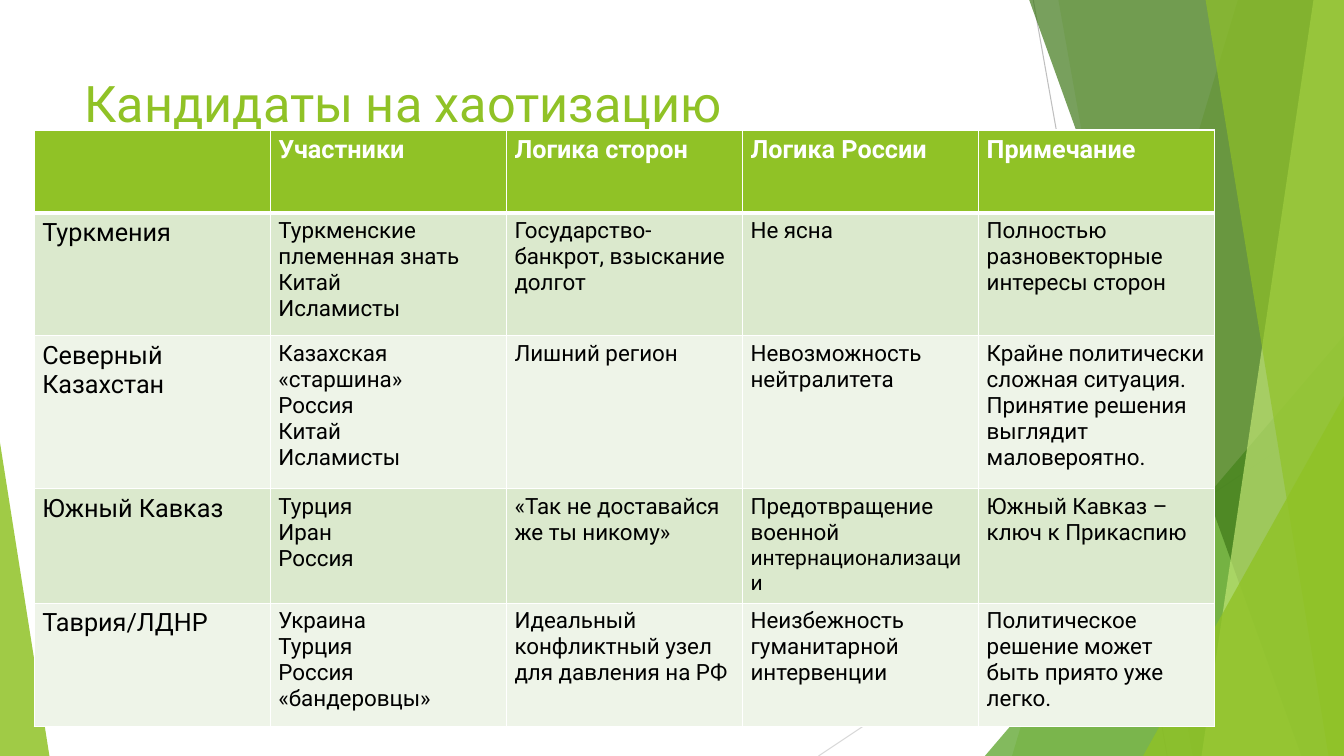
from lxml.etree import SubElement
from pptx import Presentation
from pptx.dml.color import RGBColor
from pptx.enum.shapes import MSO_CONNECTOR, MSO_SHAPE
from pptx.enum.text import MSO_ANCHOR
from pptx.oxml import parse_xml
from pptx.oxml.ns import nsdecls, qn
from pptx.util import Inches, Pt

C = {"lime": "90C226", "green": "54A021", "forest": "3F7819", "pale": "C0E474",
     "grey": "BFBFBF", "silver": "D9D9D9", "white": "FFFFFF", "black": "000000",
     "band": "DBE9CD", "light": "EEF4E8"}

prs = Presentation()
prs.slide_width, prs.slide_height = Inches(13.33), Inches(7.5)
s = prs.slides.add_slide(prs.slide_layouts[6])
X, Y = prs.slide_width / 100, prs.slide_height / 100


def paint(sp, color, opacity):
    sp.shadow.inherit = False
    sp.line.fill.background()
    sp.fill.solid()
    sp.fill.fore_color.rgb = RGBColor.from_string(C[color])
    clr = sp.fill._xPr.find(qn("a:solidFill"))[0]
    SubElement(clr, qn("a:alpha")).set("val", str(opacity * 1000))


def add_run(p, text, size, color, bold=False):
    r = p.add_run()
    r.text = text
    for name, value in {"name": "Roboto", "size": Pt(size), "bold": bold}.items():
        setattr(r.font, name, value)
    r.font.color.rgb = RGBColor.from_string(C[color])


for x1, y1, x2, y2, color in [(76.88, 0, 86.85, 100, "grey"),
                              (100, 53.73, 60.9, 100, "silver")]:
    ln = s.shapes.add_connector(MSO_CONNECTOR.STRAIGHT, int(x1 * X), int(y1 * Y),
                                int(x2 * X), int(y2 * Y))
    ln.line.color.rgb = RGBColor.from_string(C[color])
    ln.line.width = Pt(0.75)
    SubElement(ln._element.spPr, qn("a:effectLst"))

facets = [("blade", 92.1, 75.3, "lime", 30),
          ("blade", 78.75, 88.73, "lime", 20),
          ("right", 73.28, 44.4, "green", 72),
          ("blade", 76.58, 96.83, "forest", 70),
          ("blade", 97.73, 89.4, "pale", 70),
          ("blade", 89.7, 98.85, "lime", 65),
          ("right", 85.05, 52.4, "lime", 80),
          ("left", 3.68, 58.53, "lime", 85)]
for kind, a, b, color, opacity in facets:
    if kind == "blade":
        fb = s.shapes.build_freeform(int(a * X), 0)
        fb.add_line_segments([(int(x * X), int(y * Y))
                              for x, y in [(100, 0), (100, 100), (b, 100)]])
        sp = fb.convert_to_shape()
    else:
        x, w = (a, 100 - a) if kind == "right" else (0, a)
        sp = s.shapes.add_shape(MSO_SHAPE.ISOSCELES_TRIANGLE, int(x * X), int(b * Y),
                                int(w * X), int((100 - b) * Y))
        sp.adjustments[0] = 1 if kind == "right" else 0
    paint(sp, color, opacity)

title = s.shapes.add_textbox(int(5.55 * X), int(8.93 * Y), int(70.5 * X), int(19.2 * Y))
tf = title.text_frame
tf.word_wrap = True
tf.vertical_anchor = MSO_ANCHOR.TOP
add_run(tf.paragraphs[0], "Кандидаты на хаотизацию", 36, "lime")

rows = [
    ["", "Участники", "Логика сторон", "Логика России", "Примечание"],
    ["Туркмения", "Туркменские племенная знать\nКитай\nИсламисты",
     "Государство-банкрот, взыскание долгот", "Не ясна",
     "Полностью разновекторные интересы сторон"],
    ["Северный Казахстан", "Казахская «старшина»\nРоссия\nКитай\nИсламисты",
     "Лишний регион", "Невозможность нейтралитета",
     "Крайне политически сложная ситуация.\nПринятие решения выглядит маловероятно."],
    ["Южный Кавказ", "Турция\nИран\nРоссия", "«Так не доставайся же ты никому»",
     "Предотвращение военной |интернационализации", "Южный Кавказ – ключ к Прикаспию"],
    ["Таврия/ЛДНР", "Украина\nТурция\nРоссия\n«бандеровцы»",
     "Идеальный конфликтный узел для давления на РФ",
     "Неизбежность гуманитарной интервенции",
     "Политическое решение может быть приято уже легко."],
]
heights = [10.93, 16.27, 20.27, 12.53, 16.27]
col_w = 17.57
tbl = s.shapes.add_table(len(rows), 5, int(2.55 * X), int(17.2 * Y),
                         int(5 * col_w * X), int(sum(heights) * Y)).table
tbl.horz_banding = False
for col in tbl.columns:
    col.width = int(col_w * X)

margins = {"margin_left": Inches(0.08), "margin_right": Inches(0.08),
           "margin_top": Inches(0.05), "margin_bottom": Inches(0.05)}
for i, row in enumerate(rows):
    tbl.rows[i].height = int(heights[i] * Y)
    for j, text in enumerate(row):
        cell = tbl.cell(i, j)
        for name, value in margins.items():
            setattr(cell, name, value)
        tcPr = cell._tc.get_or_add_tcPr()
        for side in "LRTB":
            width = 3 if (i, side) in [(0, "B"), (1, "T")] else 1
            tcPr.append(parse_xml(
                f'<a:ln{side} {nsdecls("a")} w="{Pt(width)}"><a:solidFill>'
                f'<a:srgbClr val="{C["white"]}"/></a:solidFill></a:ln{side}>'))
        cell.fill.solid()
        fill = "lime" if i == 0 else "band" if i % 2 else "light"
        cell.fill.fore_color.rgb = RGBColor.from_string(C[fill])
        size = 18 if i == 0 or j == 0 else 16
        tf = cell.text_frame
        for k, line in enumerate(text.split("\n")):
            p = tf.add_paragraph() if k else tf.paragraphs[0]
            for n, part in enumerate(line.split("|")):
                if part:
                    add_run(p, part, 15 if n else size, "black" if i else "white", i == 0)

prs.save("out.pptx")
